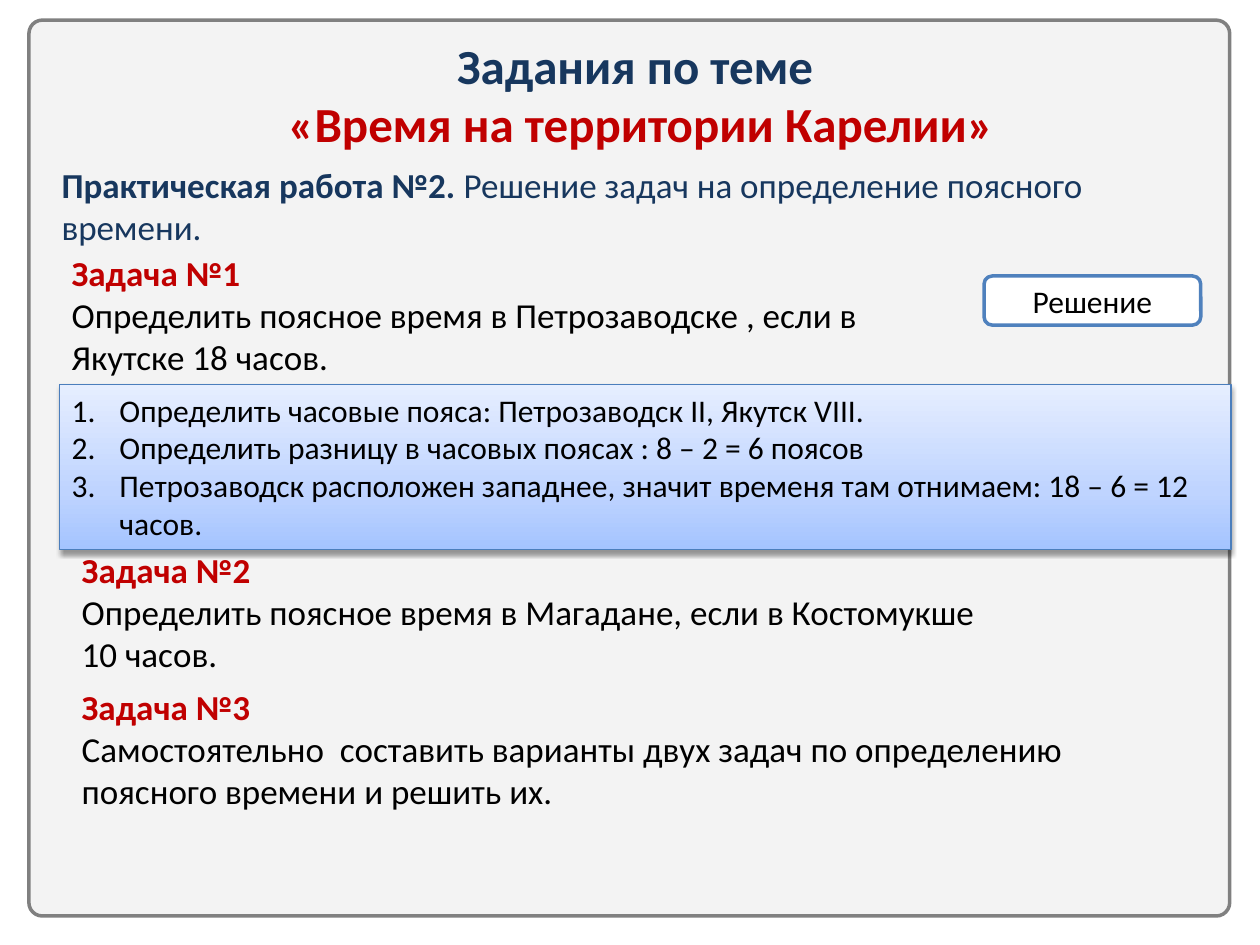
from lxml import etree
from pptx import Presentation
from pptx.dml.color import RGBColor
from pptx.enum.shapes import MSO_SHAPE
from pptx.enum.text import MSO_ANCHOR, MSO_AUTO_SIZE, PP_ALIGN
from pptx.oxml.ns import qn
from pptx.util import Inches, Pt

ROUND = MSO_SHAPE.ROUNDED_RECTANGLE
RECT = MSO_SHAPE.RECTANGLE
MIDDLE = MSO_ANCHOR.MIDDLE
TOP = MSO_ANCHOR.TOP
GROW = MSO_AUTO_SIZE.SHAPE_TO_FIT_TEXT
LEFT = PP_ALIGN.LEFT
CENTER = PP_ALIGN.CENTER

COLORS = {
    "panel": "F2F2F2", "edge": "808080", "navy": "17375E", "red": "C00000",
    "black": "000000", "white": "FFFFFF", "blue": "4F81BD", "rim": "4B7EBC",
    "deep": "A4C4FF", "mid": "BFD4FF", "pale": "E6EEFF",
}
HEAD = {"size": Pt(28), "bold": True}
LEAD = {"size": Pt(20), "bold": True}
BODY = {"size": Pt(20), "bold": False}
NOTE = {"size": Pt(18), "bold": False}

TASKS = [
    ((0.47, 1.95, 7.34, 1.11), "Задача №1",
     "Определить поясное время в Петрозаводске , если в Якутске 18 часов."),
    ((0.55, 4.3, 7.42, 1.11), "Задача №2",
     "Определить поясное время в Магадане, если в Костомукше  10 часов."),
    ((0.55, 5.39, 9.06, 1.11), "Задача №3",
     "Самостоятельно  составить варианты двух задач по определению "
     "поясного времени и решить их."),
]
STEPS = [
    "Определить часовые пояса: Петрозаводск II, Якутск VIII.",
    "Определить разницу в часовых поясах : 8 – 2 = 6 поясов",
    "Петрозаводск расположен западнее, значит временя там отнимаем: "
    "18 – 6 = 12 часов.",
]


def paint(name):
    return RGBColor.from_string(COLORS[name])


def add_node(parent, tag, **attrs):
    return etree.SubElement(parent, qn(tag), attrs)


def add_run(para, text, color, style):
    run = para.add_run()
    run.text = text
    run.font.name = "Calibri"
    run.font.color.rgb = paint(color)
    for key, value in style.items():
        setattr(run.font, key, value)


def write(frame, paras, align=LEFT):
    frame.word_wrap = True
    for i, runs in enumerate(paras):
        para = frame.paragraphs[0] if i == 0 else frame.add_paragraph()
        para.alignment = align
        for j, (text, color, style) in enumerate(runs):
            if j and style is HEAD:
                para.add_line_break()
            add_run(para, text, color, style)


def add_text(slide, box, paras, align=LEFT):
    frame = slide.shapes.add_textbox(*map(Inches, box)).text_frame
    write(frame, paras, align)
    frame.auto_size = GROW


def add_box(slide, kind, box, fill, line, width):
    shape = slide.shapes.add_shape(kind, *map(Inches, box))
    shape.shadow.inherit = False
    shape.fill.solid()
    shape.fill.fore_color.rgb = paint(fill)
    shape.line.color.rgb = paint(line)
    shape.line.width = Pt(width)
    return shape


def add_panel(slide):
    shape = add_box(slide, ROUND, (0.23, 0.16, 9.53, 7.11), "panel", "edge", 2)
    shape.adjustments[0] = 0.015
    tone = shape.fill._xPr.find(qn("a:solidFill"))[0]
    add_node(tone, "a:alpha", val="90000")


def add_button(slide):
    shape = add_box(slide, ROUND, (7.81, 2.19, 1.72, 0.39), "white", "blue", 2)
    write(shape.text_frame, [[("Решение", "black", NOTE)]], CENTER)
    shape.text_frame.vertical_anchor = MIDDLE


def shade(shape):
    shape.fill.gradient()
    shape.fill.gradient_angle = 90
    stops = shape.element.spPr.find(qn("a:gradFill")).find(qn("a:gsLst"))
    for stop in list(stops):
        stops.remove(stop)
    for place, name in ((0, "deep"), (35, "mid"), (100, "pale")):
        stop = add_node(stops, "a:gs", pos=str(place * 1000))
        add_node(stop, "a:srgbClr", val=COLORS[name])


def cast(shape):
    effect = shape.element.spPr.find(qn("a:effectLst"))
    shadow = add_node(effect, "a:outerShdw", blurRad=str(Pt(3.1)),
                      dist=str(Pt(1.6)), dir="5400000", rotWithShape="0")
    tone = add_node(shadow, "a:srgbClr", val=COLORS["black"])
    add_node(tone, "a:alpha", val="38000")


def add_answer(slide):
    shape = add_box(slide, RECT, (0.47, 3.05, 9.3, 1.31), "pale", "rim", 0.75)
    shade(shape)
    cast(shape)
    frame = shape.text_frame
    write(frame, [[(step, "black", NOTE)] for step in STEPS])
    frame.vertical_anchor = TOP
    frame.auto_size = GROW
    indent = Inches(0.38)
    for para in frame.paragraphs:
        props = para._p.get_or_add_pPr()
        props.set("marL", str(indent))
        props.set("indent", str(-indent))
        add_node(props, "a:buFont", typeface="+mj-lt")
        add_node(props, "a:buAutoNum", type="arabicPeriod")


def add_task(slide, box, title, text):
    add_text(slide, box, [[(title, "red", LEAD)], [(text, "black", BODY)]])


def main():
    deck = Presentation()
    deck.slide_width, deck.slide_height = Inches(10), Inches(7.5)
    slide = deck.slides.add_slide(deck.slide_layouts[6])
    add_panel(slide)
    add_text(slide, (0.47, 0.23, 9.14, 1.04), [[
        ("Задания по теме", "navy", HEAD),
        (" «Время на территории Карелии»", "red", HEAD),
    ]], CENTER)
    add_text(slide, (0.39, 1.25, 9.3, 0.77), [[
        ("Практическая работа №2. ", "navy", LEAD),
        ("Решение задач на определение поясного времени.", "navy", BODY),
    ]])
    for task in TASKS:
        add_task(slide, *task)
    add_button(slide)
    add_answer(slide)
    deck.save("out.pptx")


if __name__ == "__main__":
    main()
